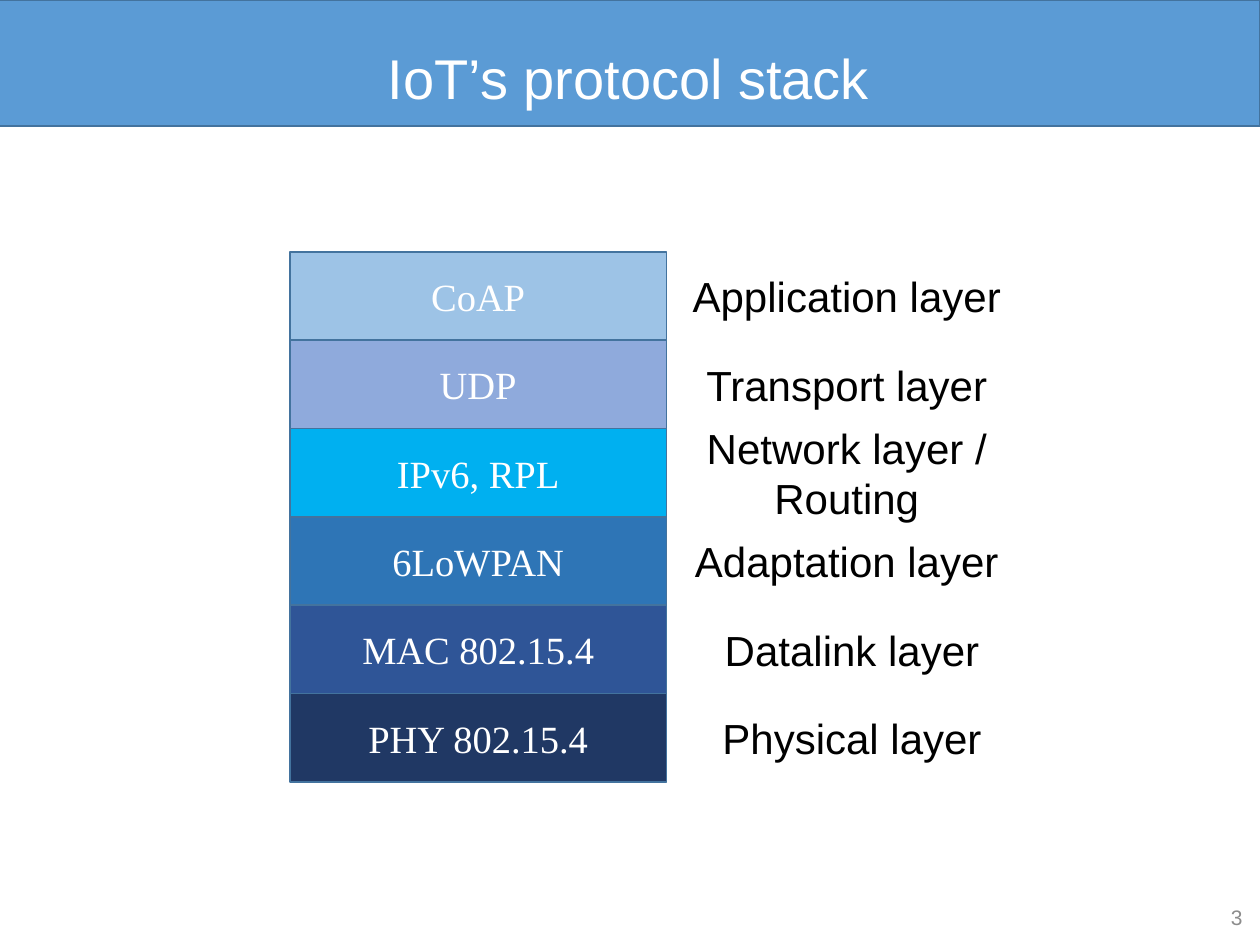
from dataclasses import dataclass

from pptx import Presentation
from pptx.dml.color import RGBColor
from pptx.enum.shapes import MSO_SHAPE
from pptx.enum.text import MSO_ANCHOR, PP_ALIGN
from pptx.util import Cm, Pt


@dataclass(frozen=True)
class Theme:
    banner: str = "5B9BD5"
    outline: str = "43739E"
    light: str = "FFFFFF"
    dark: str = "000000"
    muted: str = "8C8C8C"
    sans: str = "Arial"
    serif: str = "Times New Roman"
    title_size: int = 32
    label_size: int = 24
    protocol_size: int = 22
    number_size: int = 12


THEME = Theme()

# Stack geometry in centimetres
STACK_LEFT, STACK_TOP = 5.84, 5.08
BOX_WIDTH, ROW_HEIGHT = 7.6, 1.78
UPPER_LABEL, LOWER_LABEL = 7.26, 7.47

# Protocol, fill colour, layer name, label width
LAYERS = [
    ("CoAP", "9DC3E6", "Application layer", UPPER_LABEL),
    ("UDP", "8FAADC", "Transport layer", UPPER_LABEL),
    ("IPv6, RPL", "00B0F0", "Network layer / Routing", UPPER_LABEL),
    ("6LoWPAN", "2E75B6", "Adaptation layer", UPPER_LABEL),
    ("MAC 802.15.4", "2F5597", "Datalink layer", LOWER_LABEL),
    ("PHY 802.15.4", "203864", "Physical layer", LOWER_LABEL),
]


def write_text(shape, text, *, size, color, font=THEME.sans,
               align=PP_ALIGN.CENTER, line_spacing=None):
    frame = shape.text_frame
    frame.word_wrap = True
    frame.vertical_anchor = MSO_ANCHOR.MIDDLE
    paragraph = frame.paragraphs[0]
    paragraph.alignment = align
    paragraph.line_spacing = line_spacing
    run = paragraph.add_run()
    run.text = text
    run.font.name = font
    run.font.size = Pt(size)
    run.font.color.rgb = RGBColor.from_string(color)


def add_box(slide, left, top, width, height, fill):
    shape = slide.shapes.add_shape(
        MSO_SHAPE.RECTANGLE, Cm(left), Cm(top), Cm(width), Cm(height))
    shape.shadow.inherit = False
    shape.fill.solid()
    shape.fill.fore_color.rgb = RGBColor.from_string(fill)
    shape.line.color.rgb = RGBColor.from_string(THEME.outline)
    shape.line.width = Pt(1)
    return shape


def add_label(slide, text, left, top, width, height, **text_format):
    shape = slide.shapes.add_textbox(Cm(left), Cm(top), Cm(width), Cm(height))
    write_text(shape, text, **text_format)


def add_title(slide, text):
    title = slide.shapes.title
    title.left, title.top = Cm(-0.05), Cm(0.05)
    title.width, title.height = Cm(25.45), Cm(2.54)
    write_text(title, text, size=THEME.title_size, color=THEME.light,
               line_spacing=1.35)
    # The banner lies behind the title
    banner = add_box(slide, -0.05, 0, 25.45, 2.54, THEME.banner)
    title.element.addprevious(banner.element)


def add_layer(slide, row, protocol, fill, layer, label_width):
    top = STACK_TOP + row * ROW_HEIGHT
    box = add_box(slide, STACK_LEFT, top, BOX_WIDTH, ROW_HEIGHT, fill)
    write_text(box, protocol, size=THEME.protocol_size, color=THEME.light,
               font=THEME.serif)
    add_label(slide, layer, STACK_LEFT + BOX_WIDTH, top, label_width,
              ROW_HEIGHT, size=THEME.label_size, color=THEME.dark)


def main():
    presentation = Presentation()
    presentation.slide_width, presentation.slide_height = Cm(25.4), Cm(19.05)
    slide = presentation.slides.add_slide(presentation.slide_layouts[5])

    add_title(slide, "IoT’s protocol stack")

    # Protocol stack, top layer first
    for row, layer in enumerate(LAYERS):
        add_layer(slide, row, *layer)

    # Slide number
    add_label(slide, "3", 23.47, 18.03, 1.83, 0.91, size=THEME.number_size,
              color=THEME.muted, align=PP_ALIGN.RIGHT)

    presentation.save("out.pptx")


if __name__ == "__main__":
    main()
